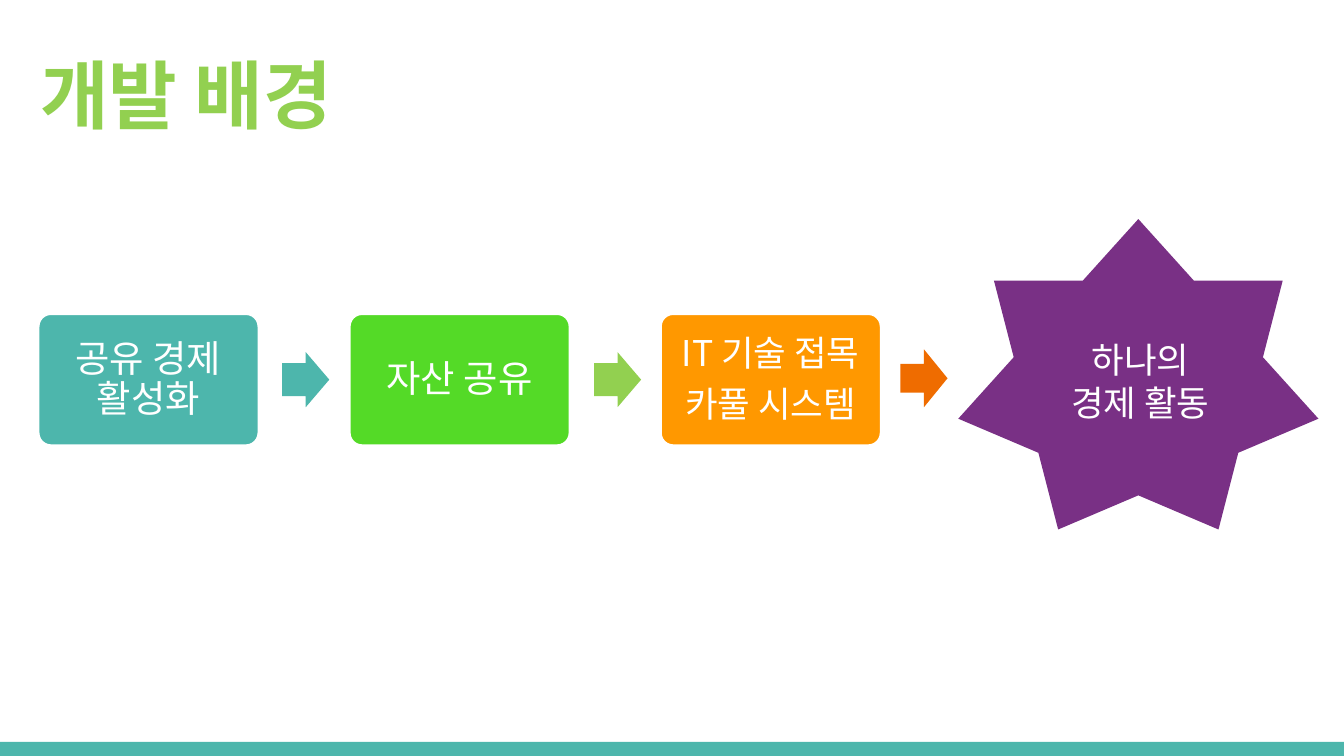
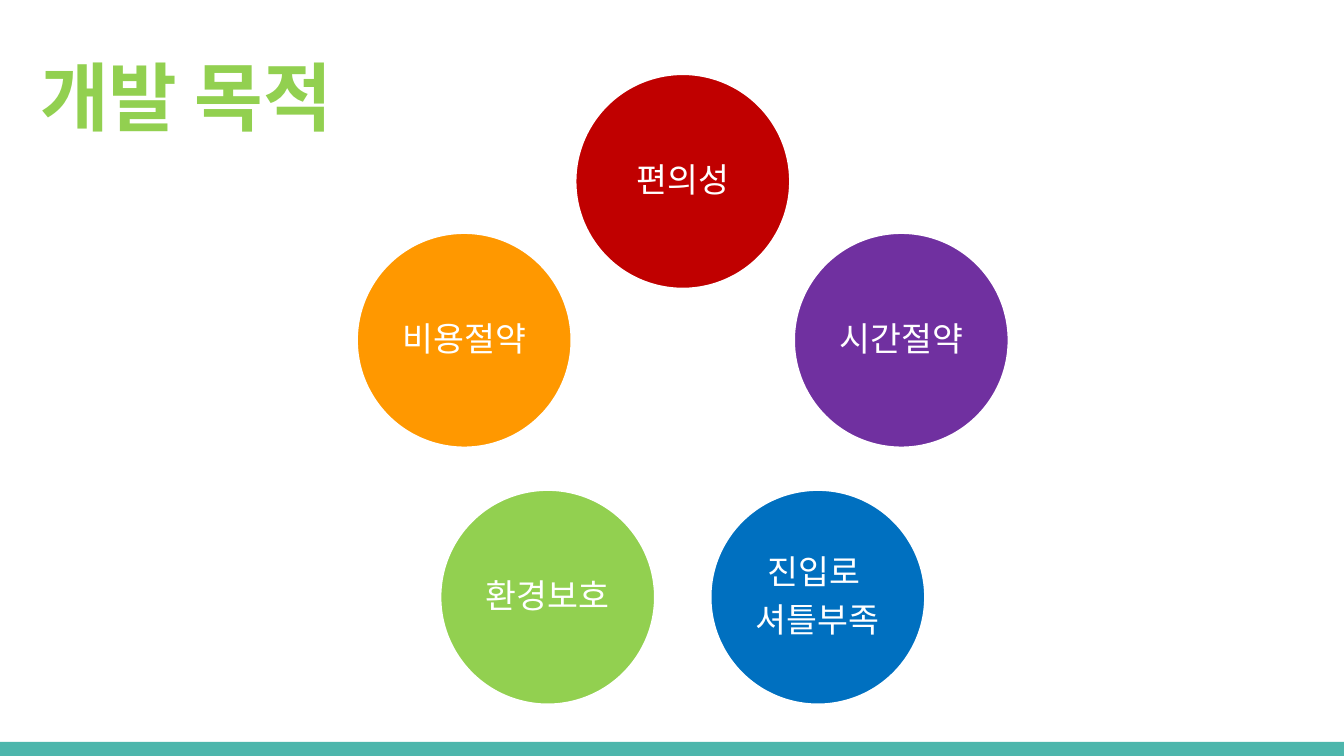
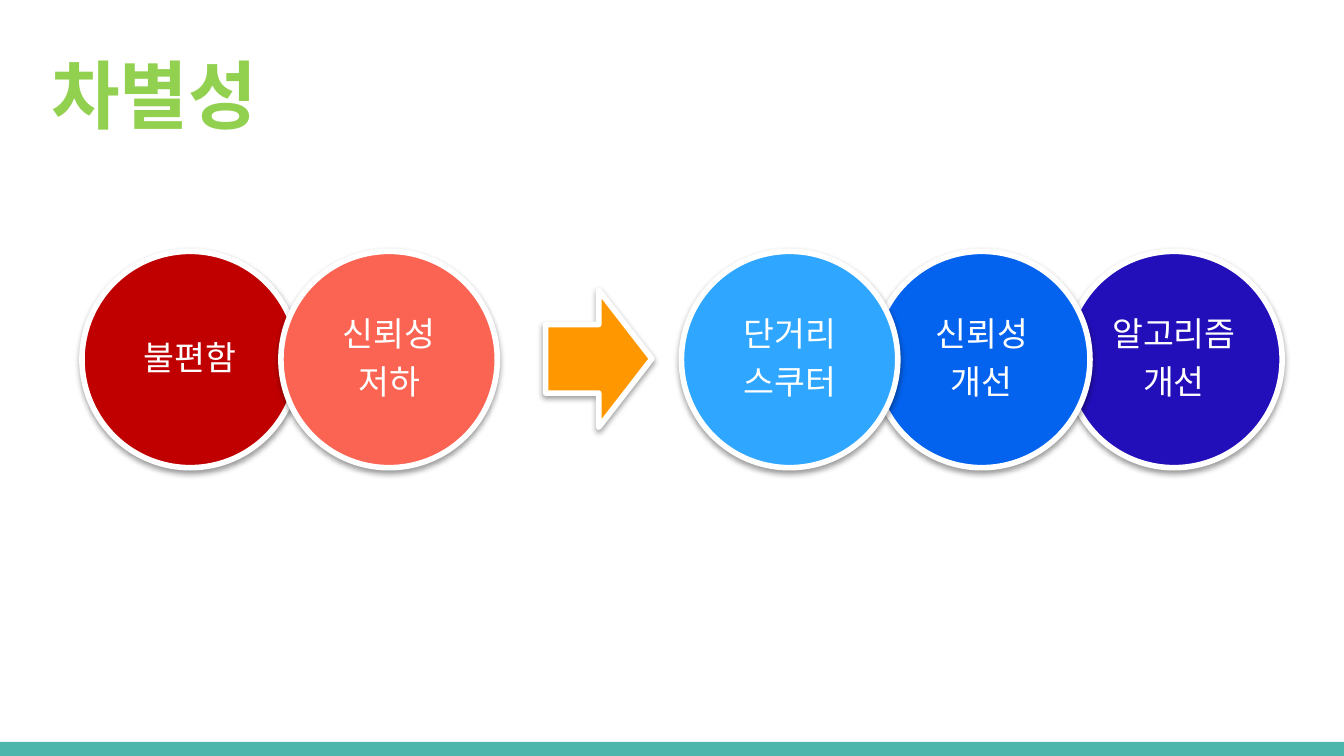
from math import cos, pi, sin

from lxml.etree import SubElement
from pptx import Presentation
from pptx.dml.color import RGBColor
from pptx.enum.shapes import MSO_SHAPE as Preset
from pptx.enum.text import MSO_ANCHOR as Anchor, MSO_AUTO_SIZE as AutoSize, PP_ALIGN as Align
from pptx.oxml.ns import qn
from pptx.util import Emu, Inches, Pt

FONT = "Noto Sans CJK KR"
COLORS = {
    "white": "FFFFFF", "teal": "4DB6AC", "lime": "92D050", "green": "54DA27",
    "orange": "FF9800", "burnt": "EF6C00", "plum": "793085", "red": "C00000",
    "purple": "7030A0", "blue": "0070C0", "coral": "FB6353", "sky": "2FA6FF",
    "azure": "0363EF", "navy": "230FB9",
}
DIAMETER = 1.61


def rgb(name):
    return RGBColor.from_string(COLORS[name])


def format_text(text_frame, size, color="white", bold=False, align=Align.CENTER,
                spacing=1.08, space_after=0.35):
    """Style every paragraph; spacing and space_after are multiples of the size."""
    for paragraph in text_frame.paragraphs:
        paragraph.alignment = align
        paragraph.line_spacing = Pt(size * spacing)
        paragraph.space_after = Pt(size * space_after)
        for run in paragraph.runs:
            run.font.size = Pt(size)
            run.font.bold = bold
            run.font.name = FONT
            run.font.color.rgb = rgb(color)
            SubElement(run.font._element, qn("a:ea"), typeface=FONT)


def set_insets(text_frame, inset):
    text_frame.margin_left = text_frame.margin_right = Inches(inset)
    text_frame.margin_top = text_frame.margin_bottom = Inches(inset)


def add_figure(slide, preset, box, fill, outline=0, adjustments=()):
    shape = slide.shapes.add_shape(preset, *map(Inches, box))
    shape.shadow.inherit = False
    shape.fill.solid()
    shape.fill.fore_color.rgb = rgb(fill)
    if outline:
        shape.line.color.rgb = rgb("white")
        shape.line.width = Pt(outline)
    else:
        shape.line.fill.background()
    for index, value in enumerate(adjustments):
        shape.adjustments[index] = value
    return shape


def add_label(shape, text, size, inset=0):
    text_frame = shape.text_frame
    text_frame.text = text
    text_frame.word_wrap = True
    text_frame.vertical_anchor = Anchor.MIDDLE
    set_insets(text_frame, inset)
    format_text(text_frame, size)


def add_circle(slide, left, top, text, fill, outline):
    box = (left, top, DIAMETER, DIAMETER)
    circle = add_figure(slide, Preset.OVAL, box, fill, outline)
    add_label(circle, text, 18)
    return circle


def add_soft_shadow(shape):
    effects = shape.element.spPr.find(qn("a:effectLst"))
    shadow = SubElement(effects, qn("a:outerShdw"), blurRad="40000", dist="20000",
                        dir="5400000", rotWithShape="0")
    color = SubElement(shadow, qn("a:srgbClr"), val="000000")
    SubElement(color, qn("a:alpha"), val="38000")


def add_titled_slide(presentation, title, box):
    slide = presentation.slides.add_slide(presentation.slide_layouts[5])
    placeholder = slide.shapes.title
    placeholder.left, placeholder.top, placeholder.width, placeholder.height = map(Inches, box)
    text_frame = placeholder.text_frame
    text_frame.text = title
    text_frame.auto_size = AutoSize.NONE
    text_frame.word_wrap = True
    text_frame.vertical_anchor = Anchor.TOP
    set_insets(text_frame, 0.1)
    format_text(text_frame, 40, "lime", True, Align.LEFT, 1.3, 0)
    return slide


def move_band_to_master(presentation, slide):
    """Draw the bottom band once, on the master that all slides share."""
    band = add_figure(slide, Preset.RECTANGLE, (0, 5.52, 10, 0.11), "teal")
    presentation.slide_master.element.cSld.spTree.append(band.element)


def add_process(slide, left, top):
    steps = [("공유 경제 활성화", "teal", 20), ("자산 공유", "green", 20),
             ("IT 기술 접목\n카풀 시스템", "orange", 19)]
    for index, (text, fill, size) in enumerate(steps):
        box = (left + 2.315 * index, top, 1.65, 0.99)
        step = add_figure(slide, Preset.ROUNDED_RECTANGLE, box, fill, 2, [0.1])
        add_label(step, text, size, 0.08)
    for offset, fill in [(1.82, "teal"), (4.14, "lime")]:
        box = (left + offset, top + 0.29, 0.35, 0.41)
        add_figure(slide, Preset.RIGHT_ARROW, box, fill, adjustments=[0.6, 0.5])
    add_figure(slide, Preset.RIGHT_ARROW, (left + 6.42, top + 0.27, 0.35, 0.43), "burnt")


def add_goal_star(slide, left, top):
    add_figure(slide, Preset.STAR_7_POINT, (left, top, 2.68, 2.31), "plum")
    label_box = (left + 0.53, top + 0.84, 1.65, 0.74)
    label = slide.shapes.add_textbox(*map(Inches, label_box))
    label.text_frame.text = "하나의\n경제 활동"
    label.text_frame.word_wrap = True
    format_text(label.text_frame, 19, spacing=1.2, space_after=0)


def add_purpose_ring(slide, center_x, center_y, radius):
    purposes = [("편의성", "red"), ("시간절약", "purple"), ("진입로 \n셔틀부족", "blue"),
                ("환경보호", "lime"), ("비용절약", "orange")]
    for index, (text, fill) in enumerate(purposes):
        angle = 2 * pi * index / len(purposes)
        left = center_x + radius * sin(angle) - DIAMETER / 2
        top = center_y - radius * cos(angle) - DIAMETER / 2
        add_circle(slide, left, top, text, fill, 2)


def add_circle_chain(slide, left, top, pitch, circles, first_on_top=False):
    placed = list(enumerate(circles))
    for index, (text, fill) in reversed(placed) if first_on_top else placed:
        add_soft_shadow(add_circle(slide, left + pitch * index, top, text, fill, 3))


def build_background_slide(presentation):
    slide = add_titled_slide(presentation, "개발 배경", (0.2, 0.21, 2.6, 0.77))
    move_band_to_master(presentation, slide)
    add_process(slide, 0.28, 2.33)
    add_goal_star(slide, 7.13, 1.63)


def build_purpose_slide(presentation):
    slide = add_titled_slide(presentation, "개발 목적", (0.2, 0.22, 9.32, 0.77))
    add_purpose_ring(slide, 5.08, 3.06, 1.71)


def build_difference_slide(presentation):
    slide = add_titled_slide(presentation, "차별성", (0.28, 0.21, 9.32, 0.77))
    problems = [("불편함", "red"), ("신뢰성\n저하", "coral")]
    solutions = [("단거리\n스쿠터", "sky"), ("신뢰성\n개선", "azure"), ("알고리즘\n개선", "navy")]
    add_circle_chain(slide, 0.61, 1.87, 1.48, problems)
    add_circle_chain(slide, 5.07, 1.87, 1.43, solutions, first_on_top=True)
    add_soft_shadow(add_figure(slide, Preset.RIGHT_ARROW, (4.06, 2.16, 0.79, 1.02), "orange", 3))


def main():
    presentation = Presentation()
    presentation.slide_width = Inches(10)
    presentation.slide_height = Emu(5143500)
    build_background_slide(presentation)
    build_purpose_slide(presentation)
    build_difference_slide(presentation)
    presentation.save("out.pptx")


if __name__ == "__main__":
    main()
